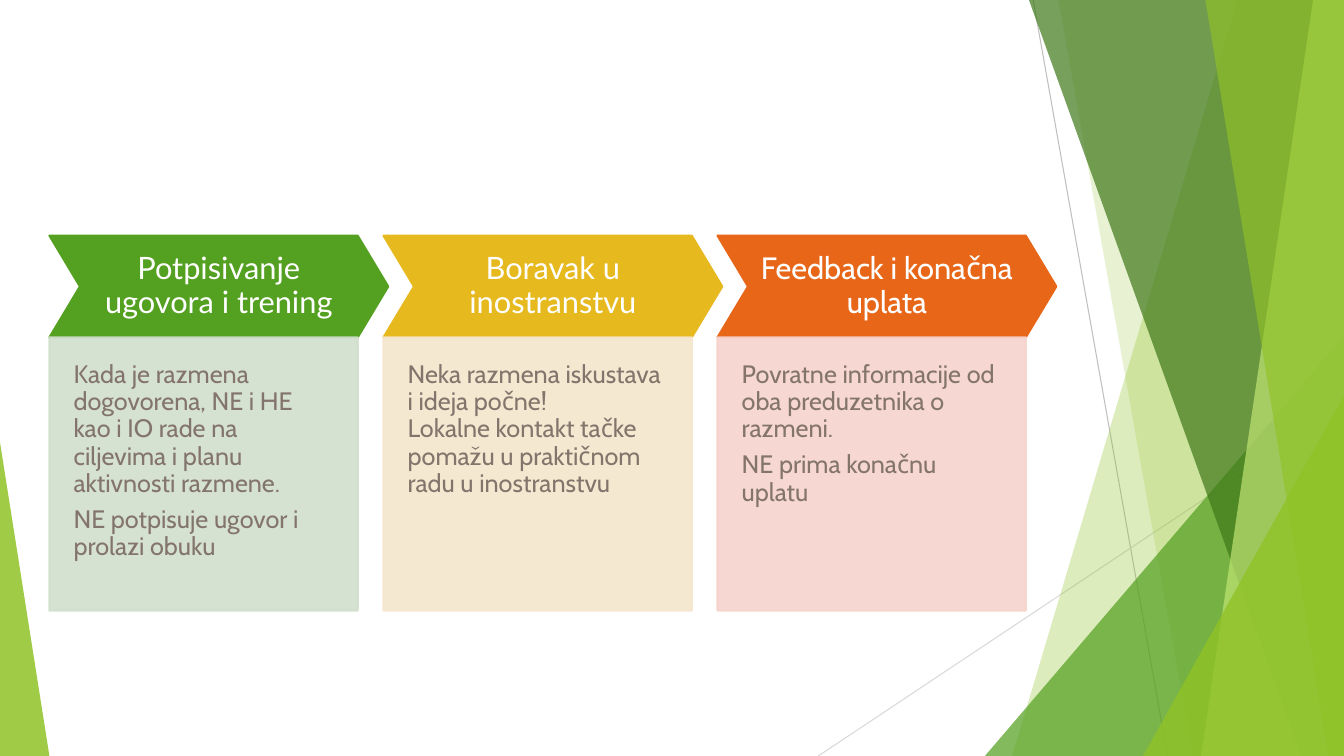
from lxml import etree
from pptx import Presentation
from pptx.dml.color import RGBColor
from pptx.enum.shapes import MSO_CONNECTOR, MSO_SHAPE
from pptx.enum.text import MSO_ANCHOR, PP_ALIGN
from pptx.oxml.ns import qn
from pptx.util import Pt

LINE = MSO_CONNECTOR.STRAIGHT
CHEVRON = MSO_SHAPE.CHEVRON
RECT = MSO_SHAPE.RECTANGLE
TRIANGLE = MSO_SHAPE.ISOSCELES_TRIANGLE
MIDDLE, TOP = MSO_ANCHOR.MIDDLE, MSO_ANCHOR.TOP
CENTER, LEFT = PP_ALIGN.CENTER, PP_ALIGN.LEFT

WHITE = RGBColor(0xFF, 0xFF, 0xFF)
SILVER = RGBColor(0xBF, 0xBF, 0xBF)
PALE = RGBColor(0xD9, 0xD9, 0xD9)
TAUPE = RGBColor(0x84, 0x75, 0x6C)
LIME = RGBColor(0x90, 0xC2, 0x26)
LIGHT = RGBColor(0xC0, 0xE4, 0x74)
GREEN = RGBColor(0x54, 0xA0, 0x21)
FOREST = RGBColor(0x3F, 0x78, 0x19)
GOLD = RGBColor(0xE6, 0xB9, 0x1E)
ORANGE = RGBColor(0xE7, 0x66, 0x18)
MINT = RGBColor(0xD1, 0xDF, 0xCD)
CREAM = RGBColor(0xF5, 0xE6, 0xCD)
ROSE = RGBColor(0xF6, 0xD3, 0xCC)

WIDE, HIGH = 960, 540
START, STEP = 35.3, 238.6
HEAD_TOP, HEAD_HIGH, HEAD_WIDE = 168.3, 72.7, 242
BODY_HIGH, BODY_WIDE = 195.2, 220.3

STEPS = [
    ("Potpisivanje ugovora i trening", "Lato", GREEN, MINT,
     ["Kada je razmena dogovorena, NE i HE kao i IO rade na ciljevima "
      "i planu aktivnosti razmene.",
      "NE potpisuje ugovor i prolazi obuku"]),
    ("Boravak u inostranstvu", "Lato", GOLD, CREAM,
     ["Neka razmena iskustava i ideja počne!\n"
      "Lokalne kontakt tačke pomažu u praktičnom radu u inostranstvu"]),
    ("Feedback i konačna uplata", "Cabin", ORANGE, ROSE,
     ["Povratne informacije od oba preduzetnika o razmeni.",
      "NE prima konačnu uplatu"]),
]


def fade(paint, alpha):
    """Set the opacity, in percent, of a solid fill element."""
    color = paint.find(".//" + qn("a:srgbClr"))
    etree.SubElement(color, qn("a:alpha"), val=str(alpha * 1000))


def write(shape, lines, font="Cabin", size=18, color=TAUPE, align=LEFT,
          anchor=TOP, insets=(17.3, 17.3, 17.3, 34.6)):
    frame = shape.text_frame
    frame.word_wrap = True
    frame.vertical_anchor = anchor
    (frame.margin_left, frame.margin_top,
     frame.margin_right, frame.margin_bottom) = map(Pt, insets)
    for i, line in enumerate(lines):
        para = frame.add_paragraph() if i else frame.paragraphs[0]
        para.text = line
        para.alignment = align
        para.line_spacing = 0.9
        para.space_after = Pt(0.35 * size)
        for run in para.runs:
            run.font.name = font
            run.font.size = Pt(size)
            run.font.color.rgb = color


class Canvas:
    def __init__(self, slide):
        self.shapes = slide.shapes

    def paint(self, shape, color, alpha=100, edge=0):
        shape.shadow.inherit = False
        shape.fill.solid()
        shape.fill.fore_color.rgb = color
        if edge:
            shape.line.width = Pt(edge)
            shape.line.color.rgb = color
        else:
            shape.line.fill.background()
        if alpha < 100:
            props = shape._element.spPr
            fade(props.find(qn("a:solidFill")), alpha)
            if edge:
                fade(props.find(qn("a:ln")), alpha)
        return shape

    def shape(self, kind, box, color, alpha=100, edge=0, adjust=None):
        item = self.shapes.add_shape(kind, *map(Pt, box))
        if adjust is not None:
            item.adjustments[0] = adjust
        return self.paint(item, color, alpha, edge)

    def ray(self, top, base, color, alpha):
        """Fill from a slanted left edge to the right side of the slide."""
        pen = self.shapes.build_freeform(Pt(top), 0, scale=1)
        corners = [(WIDE, 0), (WIDE, HIGH), (base, HIGH)]
        pen.add_line_segments([(Pt(x), Pt(y)) for x, y in corners], close=True)
        self.paint(pen.convert_to_shape(), color, alpha)

    def line(self, ends, color):
        item = self.shapes.add_connector(LINE, *map(Pt, ends))
        item.line.width = Pt(0.75)
        item.line.color.rgb = color
        etree.SubElement(item._element.spPr, qn("a:effectLst"))

    def wedge(self, left, top, width, color, alpha, apex):
        """Draw a right triangle that stands on the slide's bottom edge."""
        box = (left, top, width, HIGH - top)
        self.shape(TRIANGLE, box, color, alpha, adjust=apex)

    def backdrop(self):
        self.line((738, 0, 834, HIGH), SILVER)
        self.line((WIDE, 290, 584.5, HIGH), PALE)
        self.ray(884, 723, LIME, 30)
        self.ray(756, 852, LIME, 20)
        self.wedge(703.5, 240, 256.5, GREEN, 72, 1)
        self.ray(735, 929.5, FOREST, 70)
        self.ray(938, 858, LIGHT, 70)
        self.ray(861, 949, LIME, 65)
        self.wedge(816.5, 283, 143.5, LIME, 80, 1)
        self.wedge(0, 316, 35.3, LIME, 85, 0)

    def step(self, left, title, font, dark, soft, lines):
        box = (left, HEAD_TOP, HEAD_WIDE, HEAD_HIGH)
        head = self.shape(CHEVRON, box, dark, edge=1.5, adjust=0.3)
        write(head, [title], font=font, size=22, color=WHITE,
              align=CENTER, anchor=MIDDLE, insets=(8.6,) * 4)
        box = (left, HEAD_TOP + HEAD_HIGH, BODY_WIDE, BODY_HIGH)
        write(self.shape(RECT, box, soft, alpha=90, edge=1.5), lines)


def main():
    deck = Presentation()
    deck.slide_width, deck.slide_height = Pt(WIDE), Pt(HIGH)
    canvas = Canvas(deck.slides.add_slide(deck.slide_layouts[6]))
    canvas.backdrop()
    for i, step in enumerate(STEPS):
        canvas.step(START + i * STEP, *step)
    deck.save("out.pptx")


if __name__ == "__main__":
    main()
